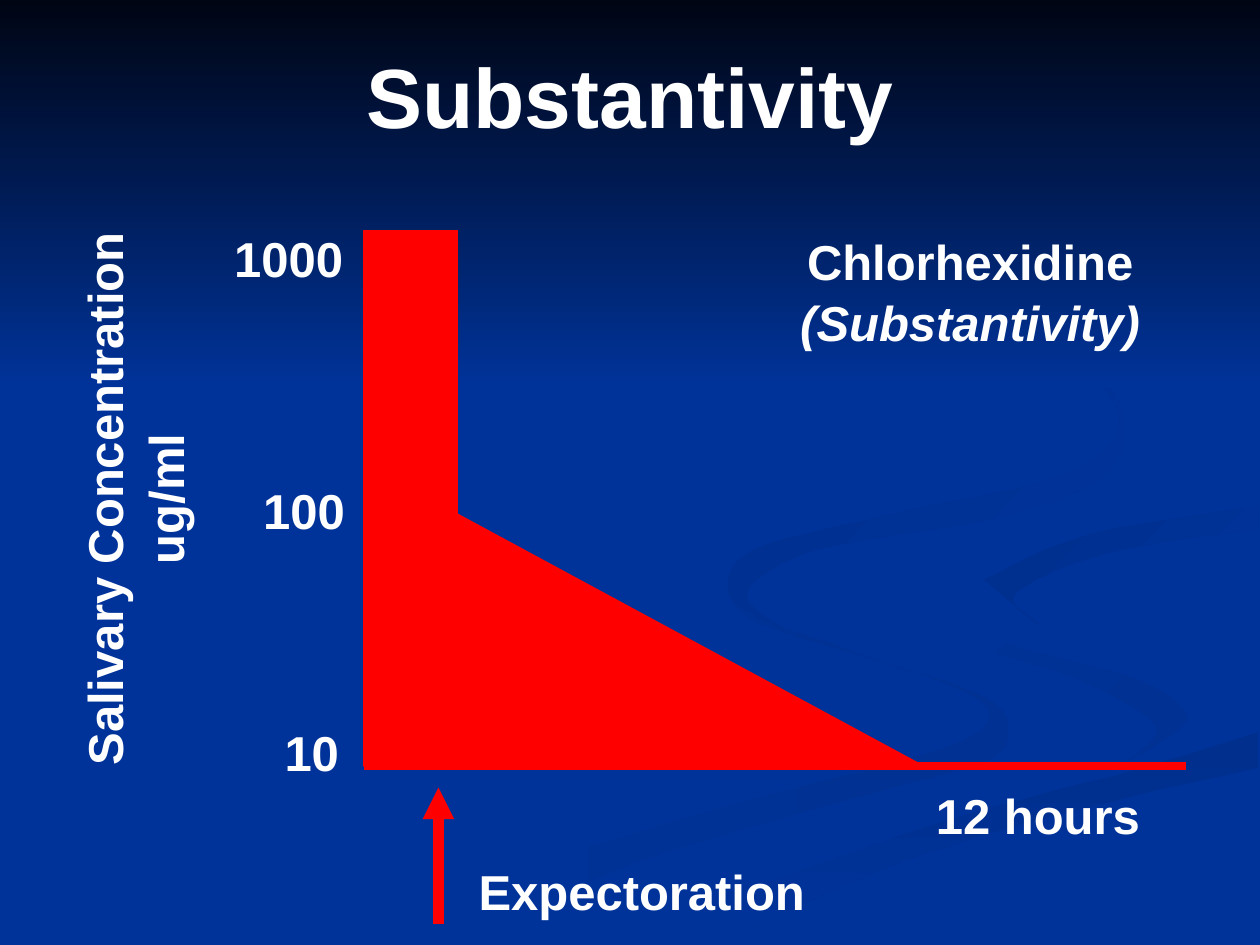
from dataclasses import dataclass
from lxml import etree
from pptx import Presentation
from pptx.dml.color import RGBColor
from pptx.enum.shapes import MSO_CONNECTOR, MSO_SHAPE
from pptx.enum.text import MSO_ANCHOR, PP_ALIGN
from pptx.oxml.ns import qn
from pptx.util import Pt

PX = 9144
STEPS = 6
LEFT, MID = PP_ALIGN.LEFT, PP_ALIGN.CENTER
CENTRE = MSO_ANCHOR.MIDDLE
RECT, WEDGE = MSO_SHAPE.RECTANGLE, MSO_SHAPE.RIGHT_TRIANGLE
LINE = MSO_CONNECTOR.STRAIGHT


@dataclass(frozen=True)
class Theme:
    """Hold the colours, font and type sizes."""
    blue: str = "003399"
    dim: str = "003193"
    dark: str = "002F8D"
    night: str = "000514"
    red: str = "FF0000"
    white: str = "FFFFFF"
    font: str = "Arial"
    head: int = 48
    body: int = 28
    lead: float = 1.04


THEME = Theme()

BEND = [(725, 464), (758, 498), (831, 519), (905, 540), (943, 570)]
SHORE = [(503, 749), (630, 693), (765, 647), (904, 610), (999, 581)]
BAY = [(781, 460), (865, 424), (999, 402)]

SWIRLS = [
    (THEME.blue, THEME.dim, 0, [
        [(575, 459), (594, 491), (679, 519), (752, 543), (785, 566),
         (749, 594), (579, 639), (417, 690), (300, 749)],
        [(361, 749), (499, 687), (676, 634), (780, 605), (800, 581),
         (781, 553), (682, 519), (594, 485), (575, 459)]]),
    (THEME.blue, THEME.dim, 45, [
        BEND + [(894, 605)],
        [(894, 605), (917, 576), (854, 539), (755, 505), (725, 464)]]),
    (THEME.dark, THEME.blue, 90, [
        SHORE, [(999, 609), (821, 651), (695, 692), (571, 749)]]),
    (THEME.blue, THEME.blue, 0, [
        BEND + [(911, 600), (743, 643), (573, 703), (477, 749)],
        SHORE, [(999, 538), (848, 503), (781, 460)], BAY,
        [(999, 387), (851, 411), (755, 432), (725, 464)]]),
    (THEME.dark, THEME.blue, 45, [
        BAY, [(999, 420), (878, 439), (805, 472), (826, 496), (781, 460)]]),
    (THEME.dark, THEME.blue, 45, [
        [(762, 233), (846, 279), (889, 335), (842, 378), (704, 409),
         (597, 437), (580, 474), (622, 500)],
        [(622, 500), (593, 470), (649, 436), (786, 412), (876, 378),
         (890, 324), (843, 275), (762, 233)]]),
]

LABELS = [
    ("Chlorhexidine (Substantivity)", (622, 177, 296, 103), MID, 0),
    ("Salivary Concentration ug/ml", (-131, 350, 458, 92), MID, 270),
    ("1000", (176, 175, 115, 57), LEFT, 0),
    ("100", (199, 375, 104, 57), LEFT, 0),
    ("10", (216, 567, 82, 57), LEFT, 0),
    ("12 hours", (733, 617, 183, 57), LEFT, 0),
    ("Expectoration", (370, 677, 282, 57), LEFT, 0),
]


def emu(*vals):
    """Turn px lengths into EMU."""
    return [val * PX for val in vals]


def rgb(code):
    """Read a hex colour."""
    return RGBColor.from_string(code)


def blend(a, b, c, d, t):
    """Find a Catmull-Rom value between b and c."""
    bow = (2 * a - 5 * b + 4 * c - d) * t + (3 * b - a - 3 * c + d) * t * t
    return round(b + t * (c - a + bow) / 2)


def curve(knots):
    """Round an edge through its knots."""
    ends = [knots[0], *knots, knots[-1]]
    points = [
        tuple(blend(*axis, step / STEPS) for axis in zip(*quad))
        for quad in zip(ends, ends[1:], ends[2:], ends[3:])
        for step in range(STEPS)
    ]
    return points + [knots[-1]]


def shade(shape, first, last, angle):
    """Fill a shape with a linear blend and no outline."""
    shape.shadow.inherit = False
    shape.line.fill.background()
    shape.fill.gradient()
    shape.fill.gradient_angle = -angle % 360
    for stop, code in zip(shape.fill.gradient_stops, (first, last)):
        stop.color.rgb = rgb(code)


def swirl(slide, first, last, angle, edges):
    """Draw one closed ribbon of the backdrop."""
    points = [point for edge in edges for point in curve(edge)]
    pen = slide.shapes.build_freeform(*points[0], scale=PX)
    pen.add_line_segments(points[1:], close=True)
    shade(pen.convert_to_shape(), first, last, angle)


def block(slide, kind, box):
    """Draw one solid red part of the curve."""
    shape = slide.shapes.add_shape(kind, *emu(*box))
    shape.shadow.inherit = False
    shape.fill.solid()
    shape.fill.fore_color.rgb = rgb(THEME.red)
    shape.line.color.rgb = rgb(THEME.red)
    shape.line.width = Pt(0.75)


def rule(slide, ends, width, arrow=False):
    """Draw a red line, with an arrowhead at its end if asked."""
    line = slide.shapes.add_connector(LINE, *emu(*ends))
    line.line.color.rgb = rgb(THEME.red)
    line.line.width = Pt(width)
    props = line.element.spPr
    if arrow:
        etree.SubElement(props.find(qn("a:ln")), qn("a:tailEnd"), type="triangle")
    etree.SubElement(props, qn("a:effectLst"))


def write(par, text, size=THEME.body, slant=None, align=LEFT):
    """Add a formatted run to a paragraph."""
    par.alignment = align
    run = par.add_run()
    run.text = text
    font = run.font
    font.name, font.size, font.bold, font.italic = THEME.font, Pt(size), True, slant
    font.color.rgb = rgb(THEME.white)


def label(slide, text, box, align, turn):
    """Add a text box, with a bracketed part in italics."""
    shape = slide.shapes.add_textbox(*emu(*box))
    shape.rotation = turn
    shape.text_frame.word_wrap = True
    par = shape.text_frame.paragraphs[0]
    par.line_spacing = THEME.lead
    plain, mark, rest = text.partition("(")
    write(par, plain, align=align)
    if mark:
        write(par, mark + rest, slant=True, align=align)


def head(slide, text, box):
    """Place the title in front of the backdrop."""
    title = slide.shapes.title
    title.left, title.top, title.width, title.height = emu(*box)
    title.text_frame.vertical_anchor = CENTRE
    write(title.text_frame.paragraphs[0], text, size=THEME.head, align=MID)
    title.element.getparent().append(title.element)


def main():
    """Build and save the slide."""
    deck = Presentation()
    deck.slide_width, deck.slide_height = emu(1000, 750)
    slide = deck.slides.add_slide(deck.slide_layouts[5])
    slide.background.fill.solid()
    slide.background.fill.fore_color.rgb = rgb(THEME.blue)
    for item in SWIRLS:
        swirl(slide, *item)
    sky = slide.shapes.add_shape(RECT, *emu(0, 0, 1000, 308))
    shade(sky, THEME.night, THEME.blue, 90)
    head(slide, "Substantivity", (22, 25, 956, 100))
    block(slide, RECT, (289, 183, 74, 425))
    block(slide, WEDGE, (363, 408, 370, 200))
    rule(slide, (289, 608, 941, 608), 4.5)
    rule(slide, (348, 733, 348, 625), 6, arrow=True)
    for item in LABELS:
        label(slide, *item)
    deck.save("out.pptx")


if __name__ == "__main__":
    main()
